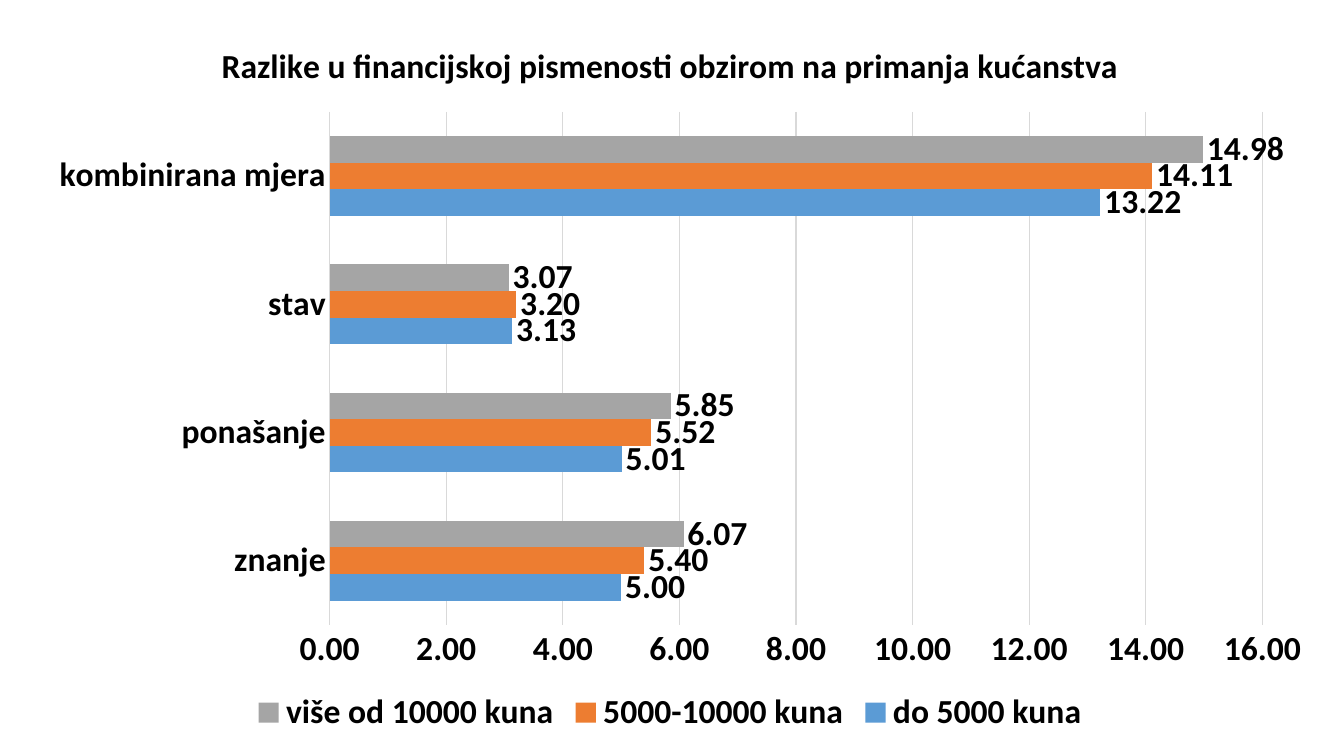
from lxml.etree import SubElement
from pptx import Presentation
from pptx.chart.data import CategoryChartData
from pptx.dml.color import RGBColor
from pptx.enum.chart import XL_CHART_TYPE, XL_LABEL_POSITION, XL_LEGEND_POSITION, XL_TICK_MARK
from pptx.oxml.ns import qn
from pptx.util import Inches, Pt

CATEGORIES = ["znanje", "ponašanje", "stav", "kombinirana mjera"]
SERIES = [
    ("do 5000 kuna", (5, 5.01, 3.13, 13.22), "5B9BD5"),
    ("5000-10000 kuna", (5.4, 5.52, 3.2, 14.11), "ED7D31"),
    ("više od 10000 kuna", (6.07, 5.85, 3.07, 14.98), "A5A5A5"),
]
TITLE = "Razlike u financijskoj pismenosti obzirom na primanja kućanstva"
FONT = {"name": "Calibri", "size": Pt(24), "bold": True}
NUMBER_FORMAT = "0.00"
GRID = "D9D9D9"
PLOT_BOX = {"x": 0.237, "y": 0.131, "w": 0.721, "h": 0.71}


def rgb(value):
    return RGBColor.from_string(value)


def set_font(font):
    for name, value in FONT.items():
        setattr(font, name, value)
    font.color.rgb = rgb("000000")


def set_line(line):
    line.color.rgb = rgb(GRID)
    line.width = Pt(0.75)


def place_plot(chart):
    """Fix the inner plot area as fractions of the chart."""
    area = chart.plots[0]._element.getparent()
    for old in area.findall(qn("c:layout")):
        area.remove(old)
    layout = SubElement(area, qn("c:layout"))
    area.insert(0, layout)
    manual = SubElement(layout, qn("c:manualLayout"))
    settings = {"layoutTarget": "inner", "xMode": "edge", "yMode": "edge", **PLOT_BOX}
    for tag, value in settings.items():
        SubElement(manual, qn(f"c:{tag}")).set("val", str(value))


def format_axes(chart):
    for axis in (chart.category_axis, chart.value_axis):
        axis.major_tick_mark = axis.minor_tick_mark = XL_TICK_MARK.NONE
        set_font(axis.tick_labels.font)
    chart.category_axis.has_major_gridlines = False
    set_line(chart.category_axis.format.line)

    values = chart.value_axis
    values.minimum_scale, values.maximum_scale, values.major_unit = 0, 16, 2
    values.tick_labels.number_format = NUMBER_FORMAT
    values.tick_labels.number_format_is_linked = False
    values.format.line.fill.background()
    set_line(values.major_gridlines.format.line)


def format_bars(plot):
    plot.gap_width = 182
    plot.overlap = 0
    plot.vary_by_categories = False
    for series, (_, _, color) in zip(plot.series, SERIES):
        series.format.fill.solid()
        series.format.fill.fore_color.rgb = rgb(color)
        series.invert_if_negative = False
        labels = series.data_labels
        labels.show_value = True
        labels.number_format = NUMBER_FORMAT
        labels.number_format_is_linked = False
        labels.position = XL_LABEL_POSITION.OUTSIDE_END
        set_font(labels.font)


def add_income_chart(slide, left, top, width, height):
    data = CategoryChartData(number_format=NUMBER_FORMAT)
    data.categories = CATEGORIES
    for name, values, _ in SERIES:
        data.add_series(name, values)
    chart = slide.shapes.add_chart(
        XL_CHART_TYPE.BAR_CLUSTERED, left, top, width, height, data).chart
    set_font(chart.font)

    chart.has_title = True
    p = chart.chart_title.text_frame.paragraphs[0]
    r = p.add_run()
    r.text = TITLE
    set_font(r.font)
    chart.chart_title.include_in_layout = False

    chart.has_legend = True
    chart.legend.position = XL_LEGEND_POSITION.BOTTOM
    chart.legend.include_in_layout = False
    set_font(chart.legend.font)

    format_axes(chart)
    format_bars(chart.plots[0])
    place_plot(chart)


def main():
    prs = Presentation()
    prs.slide_width, prs.slide_height = Inches(13.33), Inches(7.5)
    slide = prs.slides.add_slide(prs.slide_layouts[6])
    add_income_chart(slide, Inches(0.23), Inches(0.17), Inches(12.83), Inches(7.17))
    prs.save("out.pptx")


if __name__ == "__main__":
    main()
